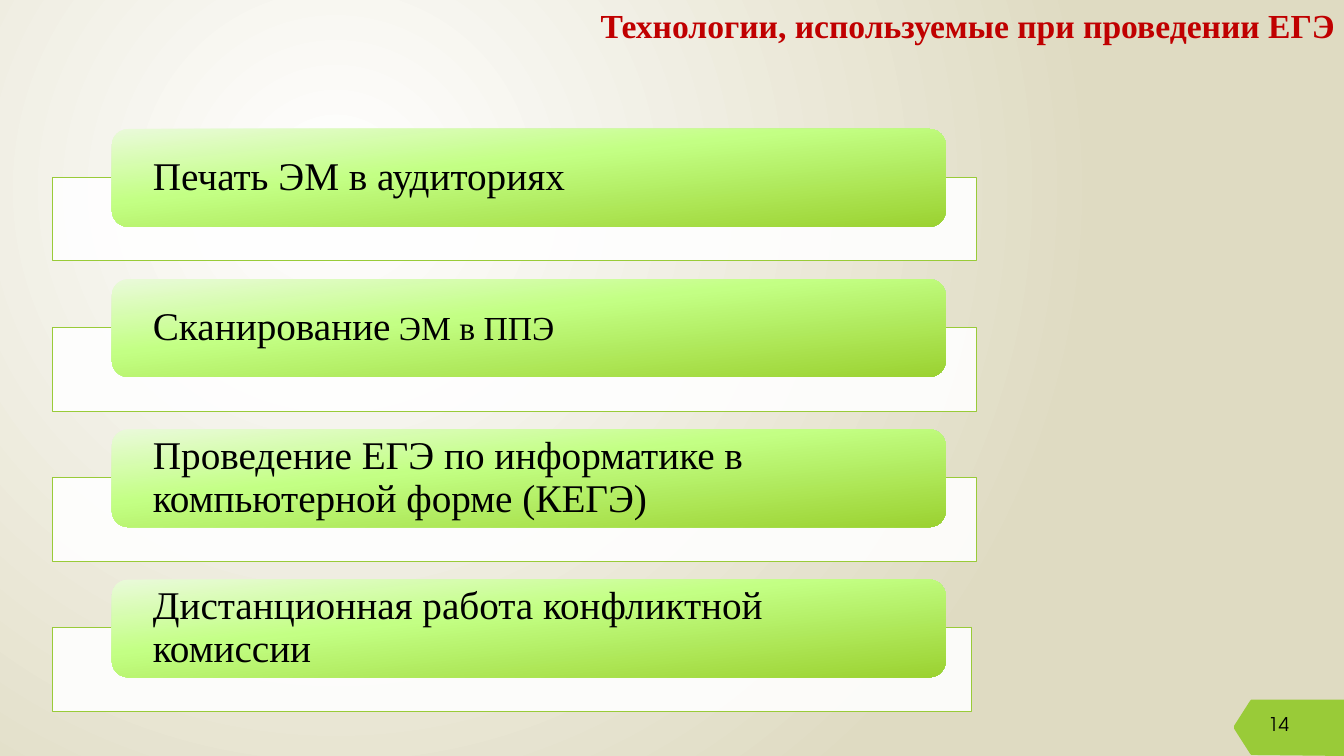
from lxml import etree
from pptx import Presentation
from pptx.dml.color import RGBColor
from pptx.enum.shapes import MSO_SHAPE
from pptx.enum.text import MSO_ANCHOR, MSO_AUTO_SIZE, PP_ALIGN
from pptx.oxml.ns import qn
from pptx.util import Inches, Pt

RECTANGLE = MSO_SHAPE.RECTANGLE
ROUNDED = MSO_SHAPE.ROUNDED_RECTANGLE
LEFT, RIGHT = PP_ALIGN.LEFT, PP_ALIGN.RIGHT
TOP, MIDDLE = MSO_ANCHOR.TOP, MSO_ANCHOR.MIDDLE
NO_AUTOFIT = MSO_AUTO_SIZE.NONE
TITLE_ONLY = 5

SERIF = "Times New Roman"
SANS = "TeX Gyre Adventor"
GREEN = "99CB38"
BACKGROUND_STOPS = [(0, "FFFFFF"), (100, "DFDBC2")]
CARD_STOPS = [(0, "EAFADA"), (40, "C3FF84"), (100, "9BD231")]
ROW_STEP = 1.49
ROWS = [
    ([("Печать ЭМ в аудиториях", 28)], 9.17),
    ([("Сканирование", 28), (" ЭМ в ППЭ", 24)], 9.17),
    ([("Проведение ЕГЭ по информатике в компьютерной форме (КЕГЭ)", 28)], 9.17),
    ([("Дистанционная работа конфликтной комиссии", 28)], 9.12),
]
TAG_OUTLINE = [
    (12.24, 7.2), (12.4, 6.95), (12.41, 6.94), (13.33, 6.94),
    (13.33, 7.5), (12.41, 7.49), (12.4, 7.48), (12.24, 7.23),
]


def color(value):
    """Turn a hex string into a colour."""
    return RGBColor.from_string(value)


def set_stops(gradient, stops):
    """Replace the stops of a gradient and drop its direction."""
    for child in list(gradient):
        gradient.remove(child)
    stop_list = etree.SubElement(gradient, qn("a:gsLst"))
    for position, value in stops:
        stop = etree.SubElement(stop_list, qn("a:gs"), pos=str(position * 1000))
        etree.SubElement(stop, qn("a:srgbClr"), val=value)


def paint_background(slide):
    """Give the slide a circular gradient centred in its upper left quarter."""
    slide.background.fill.gradient()
    gradient = slide.element.find(".//" + qn("p:bg")).find(".//" + qn("a:gradFill"))
    set_stops(gradient, BACKGROUND_STOPS)
    circle = etree.SubElement(gradient, qn("a:path"), path="circle")
    etree.SubElement(circle, qn("a:fillToRect"),
                     l="50000", t="50000", r="100000", b="100000")


def write_text(shape, runs, font=SERIF, text_color="000000", bold=False,
               align=LEFT, anchor=TOP, side_inset=0.1, end_inset=0.05, spacing=1.0):
    """Write one paragraph of (text, size) runs into a shape."""
    frame = shape.text_frame
    frame.word_wrap = True
    frame.auto_size = NO_AUTOFIT
    frame.vertical_anchor = anchor
    frame.margin_left = frame.margin_right = Inches(side_inset)
    frame.margin_top = frame.margin_bottom = Inches(end_inset)
    paragraph = frame.paragraphs[0]
    paragraph.alignment = align
    paragraph.line_spacing = spacing
    for text, size in runs:
        run = paragraph.add_run()
        run.text = text
        run.font.name = font
        run.font.size = Pt(size)
        run.font.bold = bold
        run.font.color.rgb = color(text_color)


def add_title(slide, text):
    """Place and fill the title placeholder."""
    title = slide.shapes.title
    title.left, title.top = Inches(3.41), Inches(0)
    title.width, title.height = Inches(9.93), Inches(0.66)
    write_text(title, [(text, 24)], text_color="C00000", bold=True, align=RIGHT)


def add_box(slide, kind, left, top, width, height):
    """Add a preset shape without a shadow."""
    shape = slide.shapes.add_shape(
        kind, Inches(left), Inches(top), Inches(width), Inches(height))
    shape.shadow.inherit = False
    return shape


def add_row(slide, offset, runs, panel_width):
    """Add a white panel with a green card on its upper edge."""
    panel = add_box(slide, RECTANGLE, 0.52, 1.76 + offset, panel_width, 0.83)
    panel.fill.solid()
    panel.fill.fore_color.rgb = color("FFFFFF")
    fill_color = panel.element.spPr.find(qn("a:solidFill")).find(qn("a:srgbClr"))
    etree.SubElement(fill_color, qn("a:alpha"), val="90000")
    panel.line.color.rgb = color(GREEN)
    panel.line.width = Pt(0.75)

    card = add_box(slide, ROUNDED, 1.11, 1.28 + offset, 8.27, 0.97)
    card.fill.gradient()
    gradient = card.element.spPr.find(qn("a:gradFill"))
    set_stops(gradient, CARD_STOPS)
    etree.SubElement(gradient, qn("a:lin"), ang=str(84 * 60000), scaled="0")
    card.line.fill.background()
    write_text(card, runs, anchor=MIDDLE, side_inset=0.36, spacing=0.9)


def add_page_tag(slide, number):
    """Add the green pointed tag with the page number."""
    points = [(Inches(x), Inches(y)) for x, y in TAG_OUTLINE]
    builder = slide.shapes.build_freeform(*points[0])
    builder.add_line_segments(points[1:], close=True)
    tag = builder.convert_to_shape()
    tag.shadow.inherit = False
    tag.fill.solid()
    tag.fill.fore_color.rgb = color(GREEN)
    tag.line.fill.background()
    label = slide.shapes.add_textbox(
        Inches(12.48), Inches(7.02), Inches(0.85), Inches(0.4))
    write_text(label, [(number, 13.5)], font=SANS)


def main():
    """Build and save the slide."""
    presentation = Presentation()
    presentation.slide_width = Inches(13.33)
    presentation.slide_height = Inches(7.5)
    slide = presentation.slides.add_slide(presentation.slide_layouts[TITLE_ONLY])
    paint_background(slide)
    add_title(slide, "Технологии, используемые при проведении ЕГЭ")
    add_page_tag(slide, "14")
    for index, (runs, panel_width) in enumerate(ROWS):
        add_row(slide, index * ROW_STEP, runs, panel_width)
    presentation.save("out.pptx")


if __name__ == "__main__":
    main()
